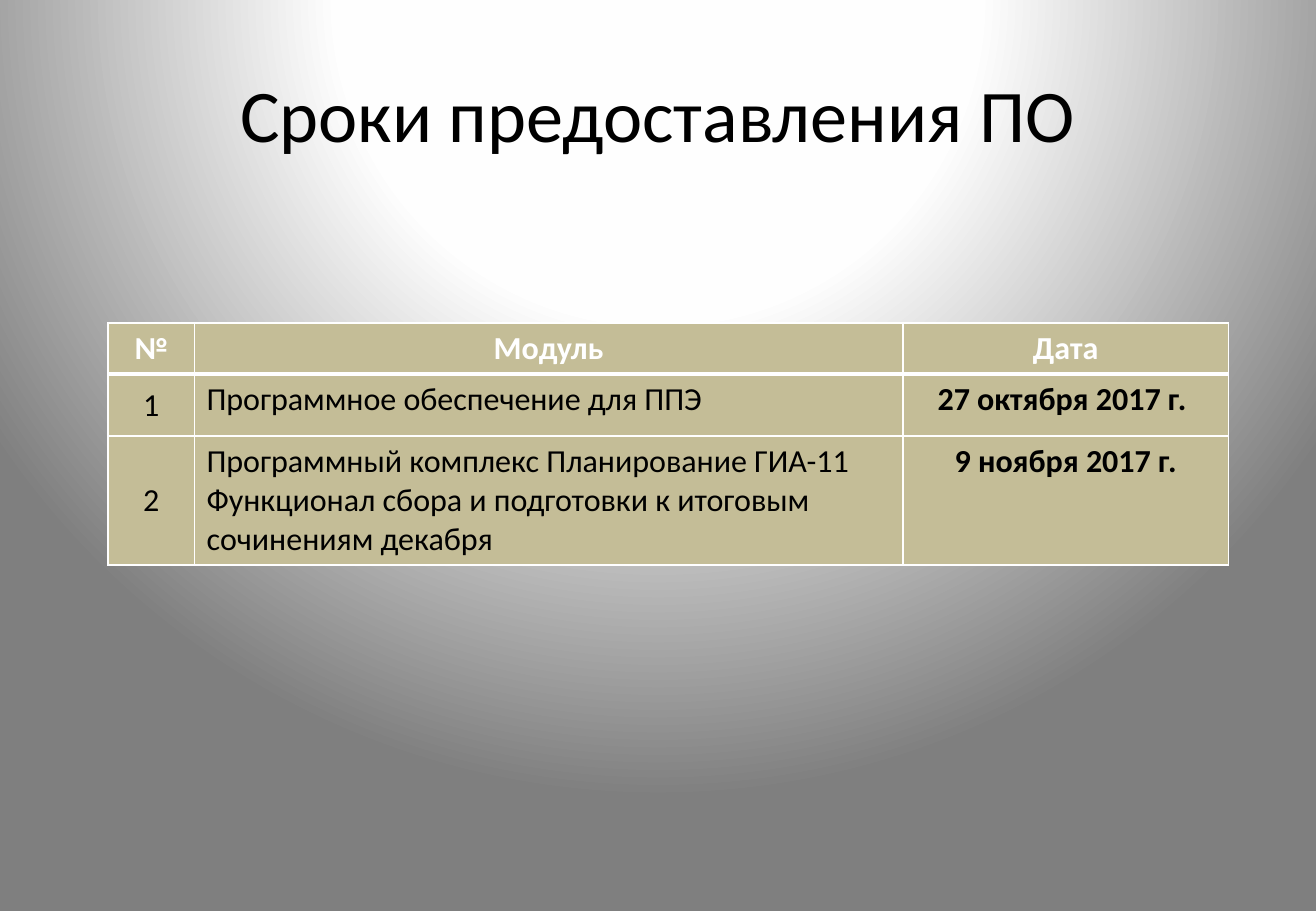
from pptx import Presentation
from pptx.dml.color import RGBColor
from pptx.enum.text import MSO_ANCHOR, PP_ALIGN
from pptx.oxml import parse_xml
from pptx.oxml.ns import nsdecls
from pptx.util import Inches, Pt

LEFT, CENTER = PP_ALIGN.LEFT, PP_ALIGN.CENTER
TOP, MIDDLE = MSO_ANCHOR.TOP, MSO_ANCHOR.MIDDLE
FONT = "Calibri"
WHITE, BLACK, SAND = "FFFFFF", "000000", "C4BD97"
STOPS = [(0, "FFFFFF"), (40, "FEFEFE"), (100, "7F7F7F")]
COLS = [0.71, 5.83, 2.68]
ROWS = [0.41, 0.51, 1.03]
DATA = [
    ["№", "Модуль", "Дата"],
    ["1", "Программное обеспечение для ППЭ", "27 октября 2017 г. "],
    ["2", "Программный комплекс Планирование ГИА-11\n"
          "Функционал сбора и подготовки к итоговым сочинениям декабря",
     "9 ноября 2017 г."],
]


def color(code):
    return RGBColor.from_string(code)


def set_text(frame, text, align, ink, **form):
    frame.text = text
    for para in frame.paragraphs:
        para.alignment = align
        para.font.color.rgb = color(ink)
        for name, value in form.items():
            setattr(para.font, name, value)


def add_glow(slide):
    """Fill the background with a round gradient centred near the top."""
    stops = "".join(
        f'<a:gs pos="{pos * 1000}"><a:srgbClr val="{code}"/></a:gs>'
        for pos, code in STOPS)
    slide.element.cSld.insert(0, parse_xml(
        f'<p:bg {nsdecls("p", "a")}><p:bgPr><a:gradFill rotWithShape="1">'
        f'<a:gsLst>{stops}</a:gsLst><a:path path="circle">'
        '<a:fillToRect l="50000" t="-80000" r="50000" b="180000"/></a:path>'
        '</a:gradFill><a:effectLst/></p:bgPr></p:bg>'))


def add_title(slide, text):
    title = slide.shapes.title
    box = {"left": 0.54, "top": 0.3, "width": 9.75, "height": 1.25}
    for name, value in box.items():
        setattr(title, name, Inches(value))
    title.text_frame.vertical_anchor = MIDDLE
    set_text(title.text_frame, text, CENTER, BLACK, size=Pt(44), name=FONT)


def set_edges(cell, row):
    """Draw white borders, thick between the header and the body."""
    widths = {"L": 1, "R": 1, "T": 3 if row == 1 else 1,
              "B": 3 if row == 0 else 1}
    props = cell._tc.get_or_add_tcPr()
    for spot, (side, width) in enumerate(widths.items()):
        props.insert(spot, parse_xml(
            f'<a:ln{side} {nsdecls("a")} w="{Pt(width)}"><a:solidFill>'
            f'<a:srgbClr val="{WHITE}"/></a:solidFill></a:ln{side}>'))


def fill_cell(cell, row, col):
    head = row == 0
    cell.fill.solid()
    cell.fill.fore_color.rgb = color(SAND)
    cell.vertical_anchor = MIDDLE if col == 0 and not head else TOP
    set_text(cell.text_frame, DATA[row][col],
             LEFT if col == 1 and not head else CENTER,
             WHITE if head else BLACK,
             size=Pt(19), name=FONT, bold=head or col == 2)
    set_edges(cell, row)


def add_dates(slide):
    table = slide.shapes.add_table(
        len(ROWS), len(COLS), Inches(0.89), Inches(2.66),
        Inches(sum(COLS)), Inches(sum(ROWS))).table
    for col, width in enumerate(COLS):
        table.columns[col].width = Inches(width)
    for row, height in enumerate(ROWS):
        table.rows[row].height = Inches(height)
        for col in range(len(COLS)):
            fill_cell(table.cell(row, col), row, col)


def main():
    deck = Presentation()
    deck.slide_width, deck.slide_height = Inches(10.83), Inches(7.5)
    slide = deck.slides.add_slide(deck.slide_layouts[5])
    add_glow(slide)
    add_title(slide, "Сроки предоставления ПО")
    add_dates(slide)
    deck.save("out.pptx")


if __name__ == "__main__":
    main()
